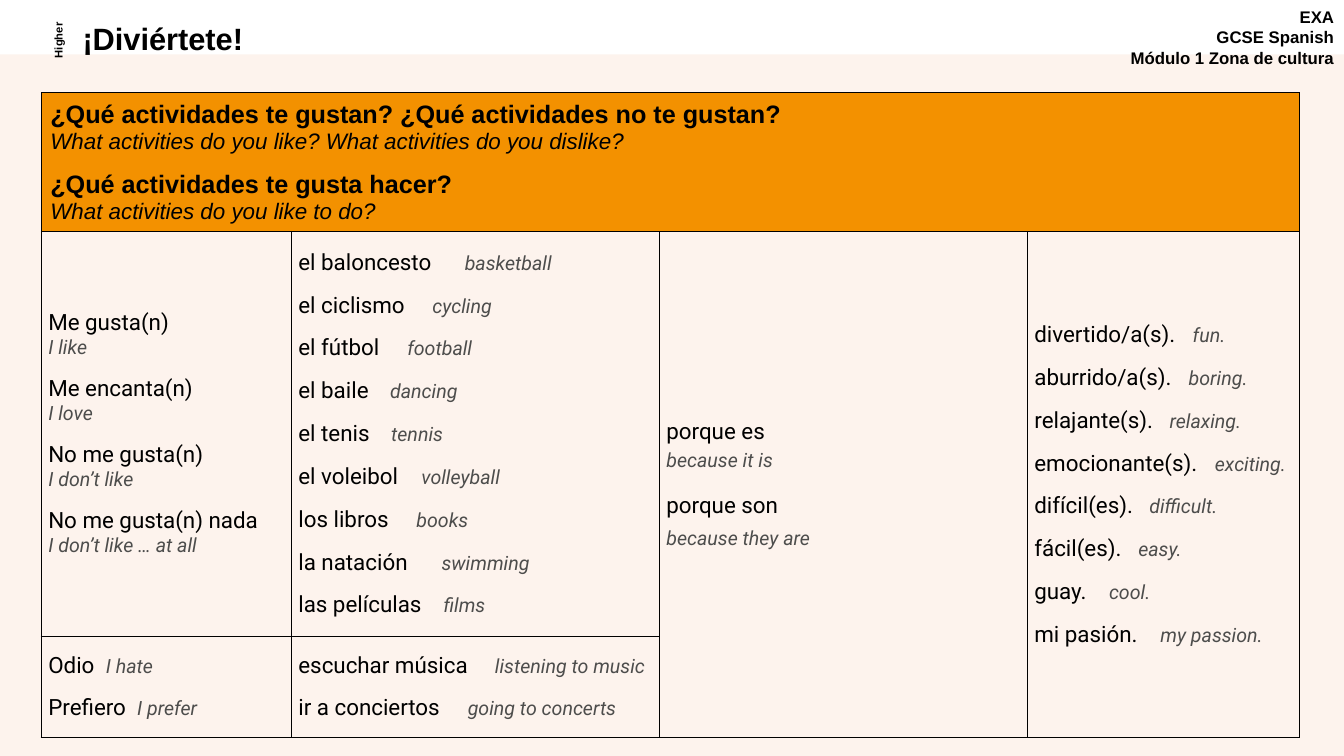
from lxml import etree
from pptx import Presentation
from pptx import util as u
from pptx.dml.color import RGBColor
from pptx.enum import shapes, text
from pptx.oxml.ns import qn

BLACK, GREY, ORANGE, CREAM = "000000", "4D4D4C", "F39100", "FDF3ED"
COLS = [2.48, 3.65, 3.65, 2.7]
ROWS = [1.34, 4.01, 1.01]
SPANISH = dict(name="Roboto", size=16)
ENGLISH = dict(name="Roboto", size=14, italic=True, color=GREY)
QUESTION = dict(name="Arial", size=18, bold=True)
TRANSLATION = dict(name="Arial", size=16, italic=True)

QUESTIONS = [
    ("¿Qué actividades te gustan? ¿Qué actividades no te gustan?",
     "What activities do you like? What activities do you dislike?"),
    ("¿Qué actividades te gusta hacer?", "What activities do you like to do?"),
]
OPINIONS = [
    ("Me gusta(n)", "I like"),
    ("Me encanta(n)", "I love"),
    ("No me gusta(n)", "I don’t like"),
    ("No me gusta(n) nada", "I don’t like … at all"),
]
REASONS = [("porque es", "because it is"), ("porque son", "because they are")]
# Spanish, English, tab stop of the English word in inches
NOUNS = [
    ("el baloncesto", "basketball", 1.65),
    ("el ciclismo", "cycling", 1.33),
    ("el fútbol", "football", 1.08),
    ("el baile", "dancing", 0.91),
    ("el tenis", "tennis", 0.92),
    ("el voleibol", "volleyball", 1.22),
    ("los libros", "books", 1.17),
    ("la natación", "swimming", 1.42),
    ("las películas", "films", 1.44),
]
ADJECTIVES = [
    ("divertido/a(s).", "fun.", 1.57),
    ("aburrido/a(s).", "boring.", 1.53),
    ("relajante(s).", "relaxing.", 1.34),
    ("emocionante(s).", "exciting.", 1.79),
    ("difícil(es).", "difficult.", 1.14),
    ("fácil(es).", "easy.", 1.03),
    ("guay.", "cool.", 0.74),
    ("mi pasión.", "my passion.", 1.25),
]
VERBS = [("Odio", "I hate", 0.57), ("Prefiero", "I prefer", 0.88)]
INFINITIVES = [
    ("escuchar música", "listening to music", 1.95),
    ("ir a conciertos", "going to concerts", 1.68),
]


def rgb(value):
    return RGBColor.from_string(value)


def add_run(p, words, size, color=BLACK, **font):
    r = p.add_run()
    r.text = words
    r.font.size = u.Pt(size)
    r.font.color.rgb = rgb(color)
    for key, value in font.items():
        setattr(r.font, key, value)


def add_paragraph(tf, **layout):
    """Use the empty first paragraph if there is one, else add another."""
    p = tf.paragraphs[0]
    if p.runs:
        p = tf.add_paragraph()
    for key, value in layout.items():
        setattr(p, key, value)
    return p


def add_label(s, box, lines, size, rotation=0, **layout):
    sp = s.shapes.add_textbox(*map(u.Inches, box))
    sp.rotation = rotation
    tf = sp.text_frame
    tf.word_wrap = True
    for line in lines:
        add_run(add_paragraph(tf, **layout), line, size, name="Arial", bold=True)


def fill_stacked(tf, pairs, top, bottom, before=0, between=0, after=12):
    """Put each translation on the line below its phrase."""
    for i, (phrase, meaning) in enumerate(pairs):
        p = add_paragraph(tf, space_after=u.Pt(between))
        if i:
            p.space_before = u.Pt(before)
        add_run(p, phrase, **top)
        last = i == len(pairs) - 1
        p = add_paragraph(tf, space_after=u.Pt(before if last and before else after))
        if last:
            p.space_before = u.Pt(before)
        add_run(p, meaning, **bottom)


def fill_inline(tf, entries):
    """Put each translation at a tab stop after its word."""
    for word, meaning, stop in entries:
        p = add_paragraph(tf, space_after=u.Pt(12))
        tabs = etree.SubElement(p._p.get_or_add_pPr(), qn("a:tabLst"))
        etree.SubElement(tabs, qn("a:tab"), pos=str(u.Inches(stop)), algn="l")
        add_run(p, word + "\t", **SPANISH)
        add_run(p, meaning, **ENGLISH)


def set_border(cell, side, width):
    ln = etree.Element(qn("a:ln" + side), w=str(u.Pt(width)))
    fill = etree.SubElement(ln, qn("a:solidFill"))
    etree.SubElement(fill, qn("a:srgbClr"), val=BLACK)
    return ln


def format_cell(cell, row, col):
    header = row == 0
    margins = (0.09, 0.04) if header else (0.07, 0)
    cell.margin_left = cell.margin_right = u.Inches(margins[0])
    cell.margin_top = cell.margin_bottom = u.Inches(margins[1])
    cell.vertical_anchor = text.MSO_ANCHOR.MIDDLE
    if header:
        cell.fill.solid()
        cell.fill.fore_color.rgb = rgb(ORANGE)
    else:
        cell.fill.background()
    outer = {"L": col == 0, "R": col == len(COLS) - 1,
             "T": False, "B": row == len(ROWS) - 1}
    inside_merge = ("L" if col == len(COLS) - 1 else "LR") if header else "T"
    sides = [side for side in "LRTB"
             if not (cell.is_spanned and side in inside_merge)]
    tcPr = cell._tc.get_or_add_tcPr()
    for i, side in enumerate(sides):
        width = 1 if outer[side] and not header else 0.75
        tcPr.insert(i, set_border(cell, side, width))


def add_vocabulary_table(s):
    frame = s.shapes.add_table(len(ROWS), len(COLS), u.Inches(0.41), u.Inches(0.92),
                               u.Inches(sum(COLS)), u.Inches(sum(ROWS)))
    table = frame.table
    table.first_row = table.horz_banding = False
    for column, width in zip(table.columns, COLS):
        column.width = u.Inches(width)
    for row, height in zip(table.rows, ROWS):
        row.height = u.Inches(height)
    table.cell(0, 0).merge(table.cell(0, 3))
    for col in (2, 3):
        table.cell(1, col).merge(table.cell(2, col))
    for row in range(len(ROWS)):
        for col in range(len(COLS)):
            format_cell(table.cell(row, col), row, col)

    fill_stacked(table.cell(0, 0).text_frame, QUESTIONS, QUESTION, TRANSLATION)
    fill_stacked(table.cell(1, 0).text_frame, OPINIONS, SPANISH, ENGLISH)
    fill_stacked(table.cell(1, 2).text_frame, REASONS, SPANISH, ENGLISH,
                 before=3, between=3)
    for place, entries in {(1, 1): NOUNS, (1, 3): ADJECTIVES,
                           (2, 0): VERBS, (2, 1): INFINITIVES}.items():
        fill_inline(table.cell(*place).text_frame, entries)


def add_background(s):
    sp = s.shapes.add_shape(shapes.MSO_SHAPE.RECTANGLE, 0, u.Inches(0.54),
                            u.Inches(13.33), u.Inches(6.96))
    sp.shadow.inherit = False
    sp.fill.solid()
    sp.fill.fore_color.rgb = rgb(CREAM)
    sp.line.fill.background()


def main():
    prs = Presentation()
    prs.slide_width, prs.slide_height = u.Inches(13.33), u.Inches(7.5)
    s = prs.slides.add_slide(prs.slide_layouts[6])
    add_background(s)
    add_label(s, (10.44, 0.02, 2.89, 0.77),
              ["EXA", "GCSE Spanish", "Módulo 1 Zona de cultura"], 12,
              alignment=text.PP_ALIGN.RIGHT)
    add_label(s, (0.72, 0.19, 6.88, 0.43), ["¡Diviértete!"], 22, line_spacing=0.9)
    add_label(s, (0.18, 0.29, 0.78, 0.22), ["Higher"], 8, rotation=270,
              alignment=text.PP_ALIGN.CENTER)
    add_vocabulary_table(s)
    prs.save("out.pptx")


if __name__ == "__main__":
    main()
